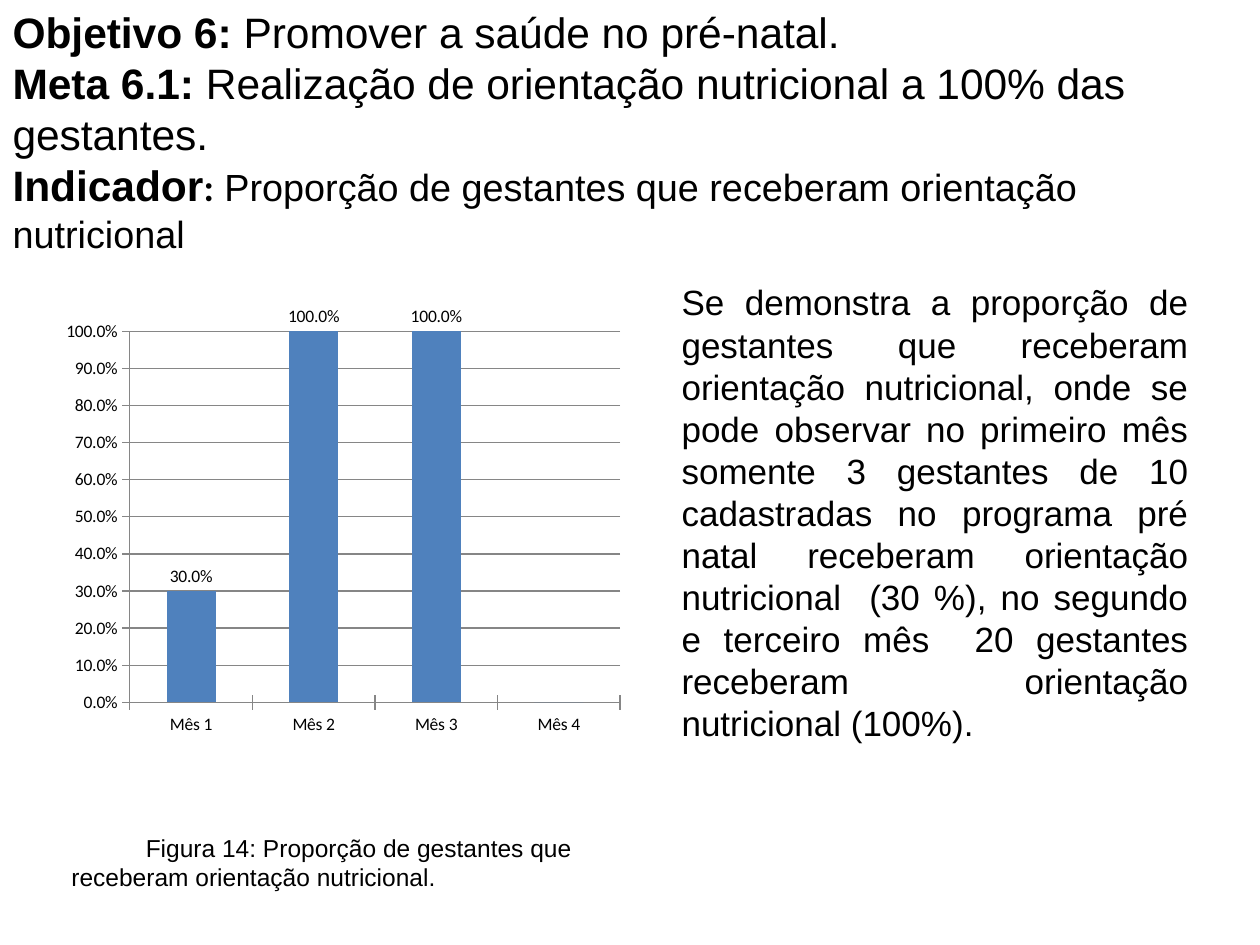
from collections import namedtuple

from lxml import etree
from pptx import Presentation
from pptx import util as u
from pptx.chart import data as cd
from pptx.dml import color
from pptx.enum import chart as ce, text
from pptx.oxml import ns

Theme = namedtuple("Theme", "ink bar grid font alt head sub body note tick")
T = Theme(
    ink=color.RGBColor.from_string("000000"),
    bar=color.RGBColor.from_string("4F81BD"),
    grid=color.RGBColor.from_string("868686"),
    font="Arial", alt="Calibri",
    head=u.Pt(24.3), sub=u.Pt(21.6), body=u.Pt(20), note=u.Pt(14), tick=u.Pt(10),
)


def style(font, size, name=T.font):
    font.size, font.name, font.color.rgb = size, name, T.ink


def add_text(words, left, top, width, height, size):
    box = slide.shapes.add_textbox(u.Cm(left), u.Cm(top), u.Cm(width), u.Cm(height))
    box.text_frame.word_wrap = True
    par = box.text_frame.paragraphs[0]
    par.text = words
    style(par.font, size)
    return box.text_frame, par


prs = Presentation()
prs.slide_width, prs.slide_height = u.Cm(25.4), u.Cm(19.05)
slide = prs.slides.add_slide(prs.slide_layouts[5])

# Title: bold labels, each followed by plain text
title = slide.shapes.title
title.left, title.top = u.Cm(0), u.Cm(0)
title.width, title.height = u.Cm(25.4), u.Cm(3.94)
frame = title.text_frame
frame.word_wrap = True
frame.auto_size = text.MSO_AUTO_SIZE.NONE
frame.vertical_anchor = text.MSO_ANCHOR.TOP
par = frame.paragraphs[0]
par.alignment = text.PP_ALIGN.LEFT
parts = [
    ("Objetivo 6: ", T.head, T.font, True),
    ("Promover a saúde no pré-natal.", T.head, T.font, False),
    None,
    ("Meta 6.1: ", T.head, T.font, True),
    ("Realização de orientação nutricional a 100% das gestantes.", T.head, T.font, False),
    None,
    ("Indicador", T.head, T.font, True),
    (":", T.sub, T.alt, True),
    (" Proporção de gestantes que receberam orientação nutricional", T.sub, T.font, False),
]
for part in parts:
    if part is None:
        par.add_line_break()
        continue
    run = par.add_run()
    run.text, size, name, run.font.bold = part
    style(run.font, size, name)

# Comment beside the chart
frame, par = add_text(
    "Se demonstra a proporção de gestantes que receberam orientação nutricional, "
    "onde se pode observar no primeiro mês somente 3 gestantes de 10 cadastradas "
    "no programa pré natal receberam orientação nutricional  (30 %), no segundo e "
    "terceiro mês  20 gestantes receberam orientação nutricional (100%).",
    13.49, 5.54, 10.72, 9.65, T.body)
par.alignment = text.PP_ALIGN.JUSTIFY

# Column chart
data = cd.CategoryChartData(number_format="0.0%")
data.categories = [f"Mês {n}" for n in range(1, 5)]
data.add_series("Series 1", (0.3, 1, 1, 0))
chart = slide.shapes.add_chart(
    ce.XL_CHART_TYPE.COLUMN_CLUSTERED,
    u.Cm(0.99), u.Cm(5.77), u.Cm(11.63), u.Cm(10.11), data).chart
chart.has_legend = chart.has_title = False
style(chart.font, T.tick, T.alt)

plot = chart.plots[0]
plot.gap_width = 150
plot.vary_by_categories = False
bars = plot.series[0]
bars.format.fill.solid()
bars.format.fill.fore_color.rgb = T.bar

tags = bars.data_labels
tags.show_value = True
tags.number_format, tags.number_format_is_linked = "0.0%", False
tags.position = ce.XL_LABEL_POSITION.OUTSIDE_END
# The empty last month carries no label
tag = etree.Element(ns.qn("c:dLbl"))
etree.SubElement(tag, ns.qn("c:idx"), val="3")
etree.SubElement(tag, ns.qn("c:delete"), val="1")
tags._element.insert(0, tag)

yaxis = chart.value_axis
yaxis.minimum_scale, yaxis.maximum_scale, yaxis.major_unit = 0, 1, 0.1
yaxis.has_major_gridlines = True
yaxis.tick_labels.number_format = "0.0%"
yaxis.tick_labels.number_format_is_linked = False
for axis in (chart.category_axis, yaxis):
    axis.major_tick_mark = ce.XL_TICK_MARK.CROSS
    axis.minor_tick_mark = ce.XL_TICK_MARK.NONE
for item in (chart.category_axis, yaxis, yaxis.major_gridlines):
    item.format.line.color.rgb = T.grid
    item.format.line.width = u.Pt(0.75)

# Fixed inner plot area, as shares of the chart frame
area = chart._chartSpace.find(".//" + ns.qn("c:plotArea"))
for old in area.findall(ns.qn("c:layout")):
    area.remove(old)
layout = etree.Element(ns.qn("c:layout"))
manual = etree.SubElement(layout, ns.qn("c:manualLayout"))
rules = [("layoutTarget", "inner"), ("xMode", "edge"), ("yMode", "edge"),
         ("x", "0.14"), ("y", "0.09"), ("w", "0.85"), ("h", "0.74")]
for key, val in rules:
    etree.SubElement(manual, ns.qn("c:" + key), val=val)
area.insert(0, layout)

# Caption with an indented first line
frame, par = add_text(
    "Figura 14: Proporção de gestantes que receberam orientação nutricional.",
    1.19, 16.66, 11.51, 1.45, T.note)
frame.vertical_anchor = text.MSO_ANCHOR.MIDDLE
par._p.get_or_add_pPr().set("indent", str(u.Cm(1.5)))

prs.save("out.pptx")
